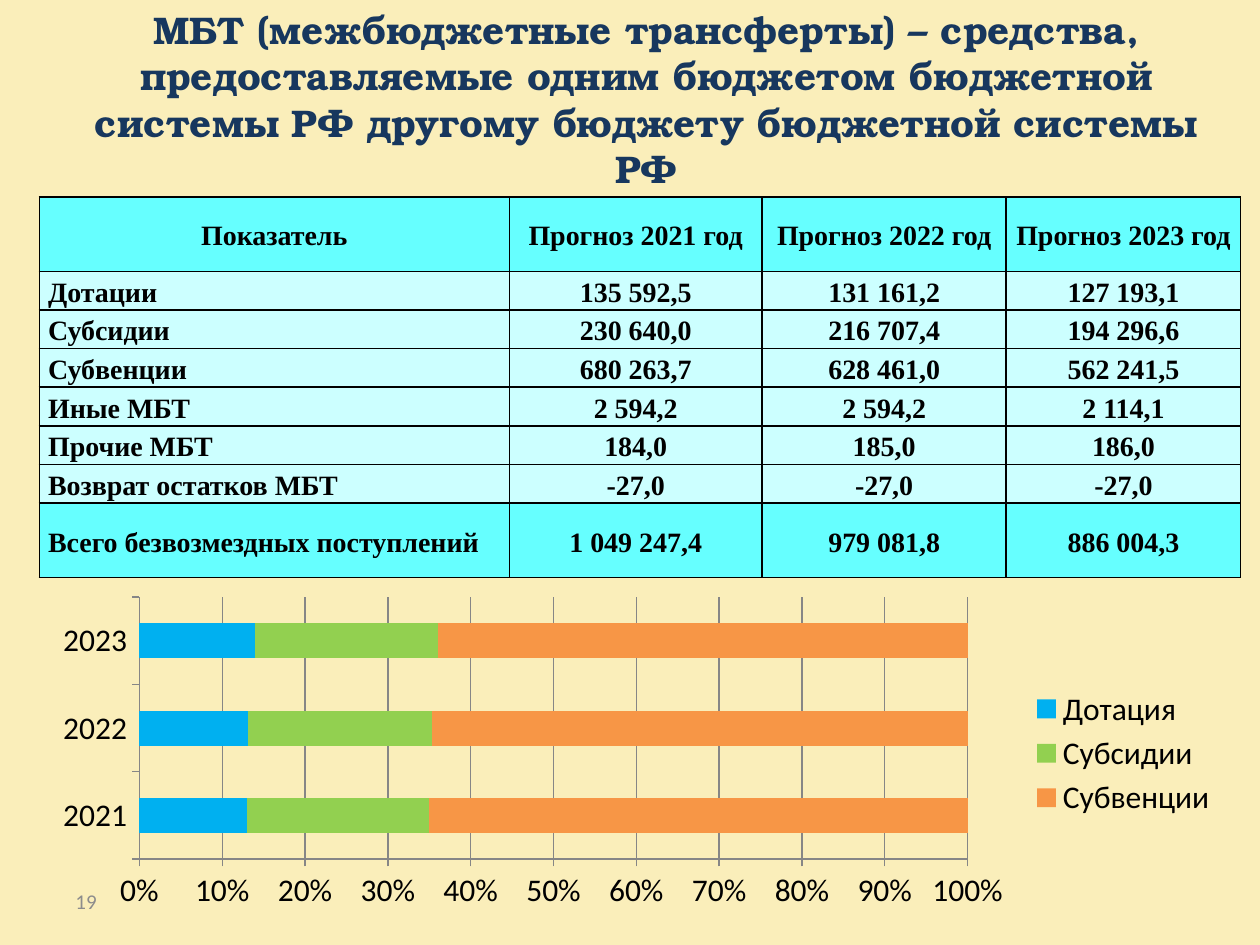
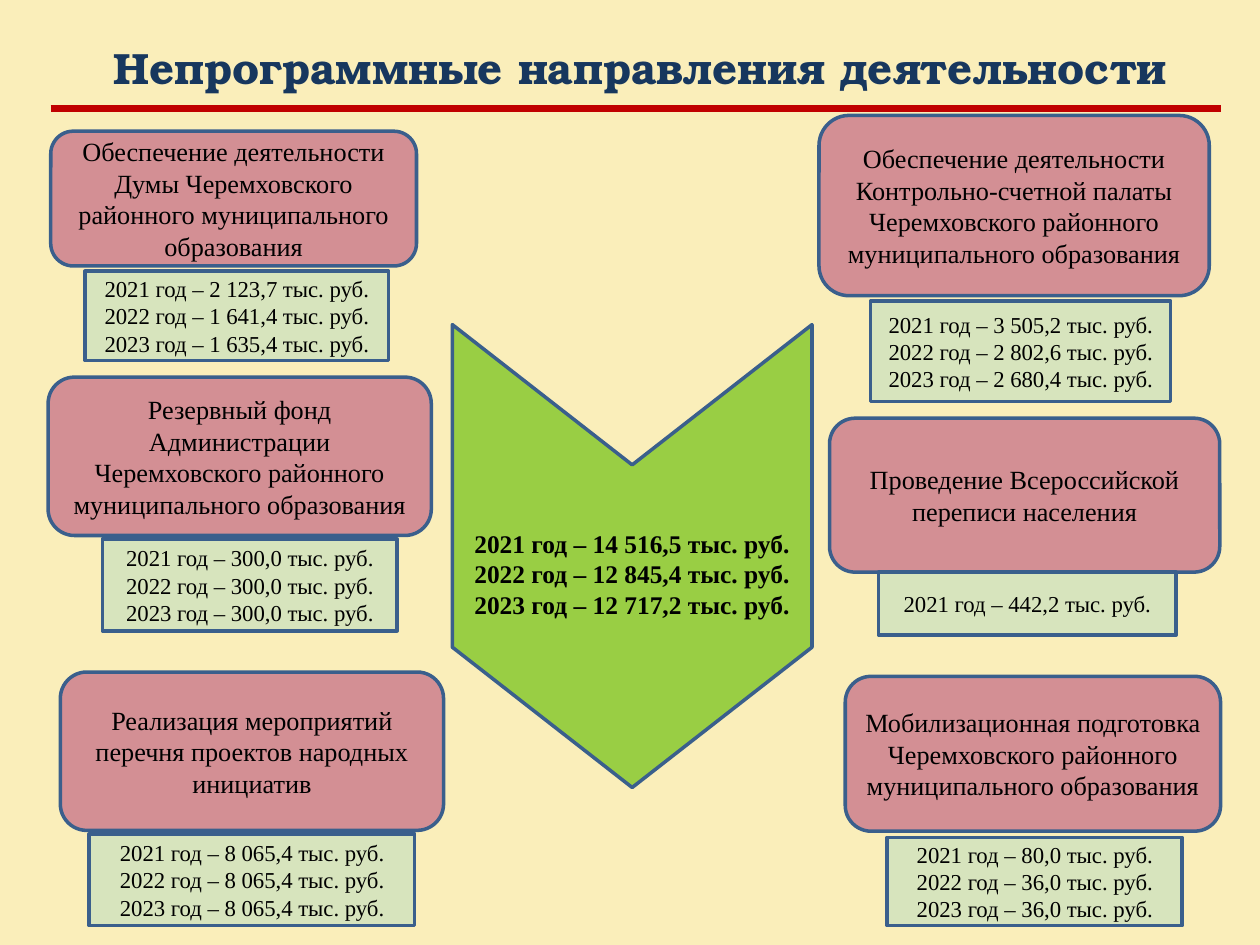
import pptx
import pptx.chart.data
import pptx.dml.color
import pptx.enum.chart
import pptx.enum.shapes
import pptx.enum.text
import pptx.oxml
import pptx.util
from lxml import etree

Pt = pptx.util.Pt
SHAPE = pptx.enum.shapes.MSO_SHAPE
ANCHOR = pptx.enum.text.MSO_ANCHOR
ALIGN = pptx.enum.text.PP_ALIGN
CHART = pptx.enum.chart

A_NS = "http://schemas.openxmlformats.org/drawingml/2006/main"
TITLE_FONT, BODY_FONT, CHART_FONT = "TeX Gyre Bonum", "Times New Roman", "Calibri"
BACKGROUND, NAVY, BLACK, GREY = "FAEEBA", "17375E", "000000", "8C8C8C"
TOTAL_FILL, ROW_FILL = "66FFFF", "CCFFFF"
OUTLINE, DIRECTION_FILL, AMOUNT_FILL = "3A5F8C", "D38F94", "D7E4BD"
CHEVRON_FILL, RULE, AXIS = "99CE44", "C00000", "868686"

TRANSFERS = [
    ("Показатель", "Прогноз 2021 год", "Прогноз 2022 год", "Прогноз 2023 год"),
    ("Дотации", "135 592,5", "131 161,2", "127 193,1"),
    ("Субсидии", "230 640,0", "216 707,4", "194 296,6"),
    ("Субвенции", "680 263,7", "628 461,0", "562 241,5"),
    ("Иные МБТ", "2 594,2", "2 594,2", "2 114,1"),
    ("Прочие МБТ", "184,0", "185,0", "186,0"),
    ("Возврат остатков МБТ", "-27,0", "-27,0", "-27,0"),
    ("Всего безвозмездных поступлений", "1 049 247,4", "979 081,8", "886 004,3"),
]
SHARES = [
    ("Дотация", (13, 13, 14), "00B0F0"),
    ("Субсидии", (22, 22, 22), "92D050"),
    ("Субвенции", (65, 64, 64), "F79646"),
]
# Heading, its box, the amounts' (indent, gap, width, height), amounts from 2021 on
DIRECTIONS = [
    ("Обеспечение деятельности Думы Черемховского районного муниципального образования",
     (29, 75, 209, 77), (19.5, 3, 173.5, 51), ("2 123,7", "1 641,4", "1 635,4")),
    ("Обеспечение деятельности Контрольно-счетной палаты Черемховского районного "
     "муниципального образования",
     (468, 66, 223, 103), (29.5, 3, 171.5, 57.5), ("3 505,2", "2 802,6", "2 680,4")),
    ("Резервный фонд Администрации Черемховского районного муниципального образования",
     (27.5, 215.5, 219, 90.5), (31, 2, 168.5, 52.5), ("300,0", "300,0", "300,0")),
    ("Проведение Всероссийской переписи населения",
     (474, 239, 223, 88), (28, 0, 170, 36), ("442,2",)),
    ("Реализация мероприятий перечня проектов народных инициатив",
     (34.5, 384, 219, 90.5), (16.5, 2, 186, 52.5), ("8 065,4", "8 065,4", "8 065,4")),
    ("Мобилизационная подготовка Черемховского районного муниципального образования",
     (483, 386.5, 214.5, 88.5), (24, 3.5, 168.5, 50.5), ("80,0", "36,0", "36,0")),
]
TOTALS = ("14 516,5", "12 845,4", "12 717,2")


def rgb(value):
    return pptx.dml.color.RGBColor.from_string(value)


def paint(fill, color):
    fill.solid()
    fill.fore_color.rgb = rgb(color)


def style_font(font, name, size, color, bold=False):
    font.name = name
    font.size = Pt(size)
    font.bold = bold
    font.color.rgb = rgb(color)


def write(frame, text, name, size, color=BLACK, bold=False, align=ALIGN.CENTER,
          anchor=ANCHOR.MIDDLE):
    frame.text = text
    frame.vertical_anchor = anchor
    frame.word_wrap = True
    for paragraph in frame.paragraphs:
        paragraph.alignment = align
        for run in paragraph.runs:
            style_font(run.font, name, size, color, bold)


def add_text(slide, box, text, name, size, **look):
    frame = slide.shapes.add_textbox(*map(Pt, box)).text_frame
    write(frame, text, name, size, **look)
    return frame


def add_title(slide, box, text, size, anchor=ANCHOR.MIDDLE):
    return add_text(slide, box, text, TITLE_FONT, size, color=NAVY, bold=True, anchor=anchor)


def add_outlined(slide, kind, box, color):
    shape = slide.shapes.add_shape(kind, *map(Pt, box))
    shape.shadow.inherit = False
    paint(shape.fill, color)
    shape.line.color.rgb = rgb(OUTLINE)
    shape.line.width = Pt(2)
    return shape


def yearly(amounts):
    """One line a year, from 2021 on."""
    return "\n".join(f"{year} год – {amount} тыс. руб."
                     for year, amount in enumerate(amounts, 2021))


def cast_text_shadow(frame):
    for run in frame.paragraphs[0].runs:
        effect = pptx.oxml.parse_xml(
            f'<a:effectLst xmlns:a="{A_NS}"><a:outerShdw blurRad="38100" dist="38100" '
            'dir="2700000" algn="tl"><a:srgbClr val="000000"><a:alpha val="43000"/>'
            '</a:srgbClr></a:outerShdw></a:effectLst>')
        run.font._element.find(f"{{{A_NS}}}solidFill").addnext(effect)


def border_cell(cell):
    properties = cell._tc.get_or_add_tcPr()
    for position, side in enumerate(("lnL", "lnR", "lnT", "lnB")):
        properties.insert(position, pptx.oxml.parse_xml(
            f'<a:{side} xmlns:a="{A_NS}" w="12700"><a:solidFill>'
            f'<a:srgbClr val="{BLACK}"/></a:solidFill></a:{side}>'))


def transfers_table(slide, left, top):
    widths = (268.5, 144.5, 139.5, 134)
    heights = [42.5] + [22.1] * (len(TRANSFERS) - 2) + [42.5]
    table = slide.shapes.add_table(
        len(heights), len(widths), Pt(left), Pt(top), Pt(sum(widths)), Pt(sum(heights))).table
    table.first_row = table.horz_banding = False
    for column, width in zip(table.columns, widths):
        column.width = Pt(width)
    for r, (values, height) in enumerate(zip(TRANSFERS, heights)):
        table.rows[r].height = Pt(height)
        for c, value in enumerate(values):
            cell = table.cell(r, c)
            cell.margin_left = cell.margin_right = Pt(5)
            cell.margin_top = cell.margin_bottom = 0
            cell.vertical_anchor = ANCHOR.MIDDLE
            paint(cell.fill, TOTAL_FILL if r in (0, len(heights) - 1) else ROW_FILL)
            border_cell(cell)
            cell.text = value
            paragraph = cell.text_frame.paragraphs[0]
            paragraph.alignment = ALIGN.LEFT if r and not c else ALIGN.CENTER
            paragraph.line_spacing = 1.15
            style_font(paragraph.runs[0].font, BODY_FONT, 16, BLACK, True)


def shares_chart(slide, box):
    data = pptx.chart.data.CategoryChartData()
    data.categories = ("2021", "2022", "2023")
    for name, values, _ in SHARES:
        data.add_series(name, values)
    chart = slide.shapes.add_chart(
        CHART.XL_CHART_TYPE.BAR_STACKED_100, *map(Pt, box), data).chart
    style_font(chart.font, CHART_FONT, 18, BLACK)
    chart.has_title = False
    chart.has_legend = True
    chart.legend.position = CHART.XL_LEGEND_POSITION.RIGHT
    chart.legend.include_in_layout = False
    bars = chart.plots[0]
    bars.gap_width, bars.overlap = 150, 100
    bars.vary_by_categories = False
    for series, (_, _, color) in zip(bars.series, SHARES):
        paint(series.format.fill, color)
    for axis in (chart.category_axis, chart.value_axis):
        axis.major_tick_mark = CHART.XL_TICK_MARK.OUTSIDE
        axis.format.line.color.rgb = rgb(AXIS)
    chart.category_axis.has_major_gridlines = False
    chart.value_axis.has_major_gridlines = True
    chart.value_axis.major_gridlines.format.line.color.rgb = rgb(AXIS)
    chart.value_axis.tick_labels.number_format = "0%"
    chart.value_axis.tick_labels.number_format_is_linked = False


def direction_card(slide, heading, box, amounts_place, amounts):
    left, top, _, height = box
    indent, gap, amounts_width, amounts_height = amounts_place
    direction = add_outlined(slide, SHAPE.FLOWCHART_ALTERNATE_PROCESS, box, DIRECTION_FILL)
    write(direction.text_frame, heading, BODY_FONT, 15)
    amounts_box = (left + indent, top + height + gap, amounts_width, amounts_height)
    costs = add_outlined(slide, SHAPE.RECTANGLE, amounts_box, AMOUNT_FILL)
    write(costs.text_frame, yearly(amounts), BODY_FONT, 13)


def totals_chevron(slide, box):
    """Downward chevron filling the box, with the totals written over it."""
    left, top, width, height = box
    unturned = (left + (width - height) / 2, top + (height - width) / 2, height, width)
    chevron = add_outlined(slide, SHAPE.CHEVRON, unturned, CHEVRON_FILL)
    chevron.rotation = 90
    chevron.adjustments[0] = 0.39
    totals = add_text(slide, (left + 5.5, top + 112.5, width - 8.5, 60), yearly(TOTALS),
                      BODY_FONT, 14.5, bold=True, align=ALIGN.LEFT, anchor=ANCHOR.TOP)
    totals.word_wrap = False


def title_rule(slide, left, right, y):
    rule = slide.shapes.add_connector(
        pptx.enum.shapes.MSO_CONNECTOR.STRAIGHT, Pt(left), Pt(y), Pt(right), Pt(y))
    rule.line.color.rgb = rgb(RULE)
    rule.line.width = Pt(3.75)
    etree.SubElement(rule._element.spPr, f"{{{A_NS}}}effectLst")


def new_slide(deck):
    slide = deck.slides.add_slide(deck.slide_layouts[6])
    paint(slide.background.fill, BACKGROUND)
    return slide


def transfers_slide(deck):
    slide = new_slide(deck)
    add_text(slide, (36, 500.5, 168, 28.5), "19", CHART_FONT, 12, color=GREY, align=ALIGN.LEFT)
    title = add_title(
        slide, (44, 0, 651, 114),
        "МБТ (межбюджетные трансферты) – средства, предоставляемые одним бюджетом "
        "бюджетной системы РФ другому бюджету бюджетной системы РФ", 22, ANCHOR.TOP)
    cast_text_shadow(title)
    transfers_table(slide, 22.5, 112.5)
    shares_chart(slide, (22.5, 337.5, 680.5, 186))


def directions_slide(deck):
    slide = new_slide(deck)
    for direction in DIRECTIONS:
        direction_card(slide, *direction)
    totals_chevron(slide, (258.5, 185.5, 205.5, 264.5))
    title_rule(slide, 29, 697.5, 62)
    add_title(slide, (34.5, 14.5, 663, 47.5), "Непрограммные направления деятельности", 25)


def main():
    deck = pptx.Presentation()
    deck.slide_width, deck.slide_height = Pt(720), Pt(540)
    transfers_slide(deck)
    directions_slide(deck)
    deck.save("out.pptx")


if __name__ == "__main__":
    main()
